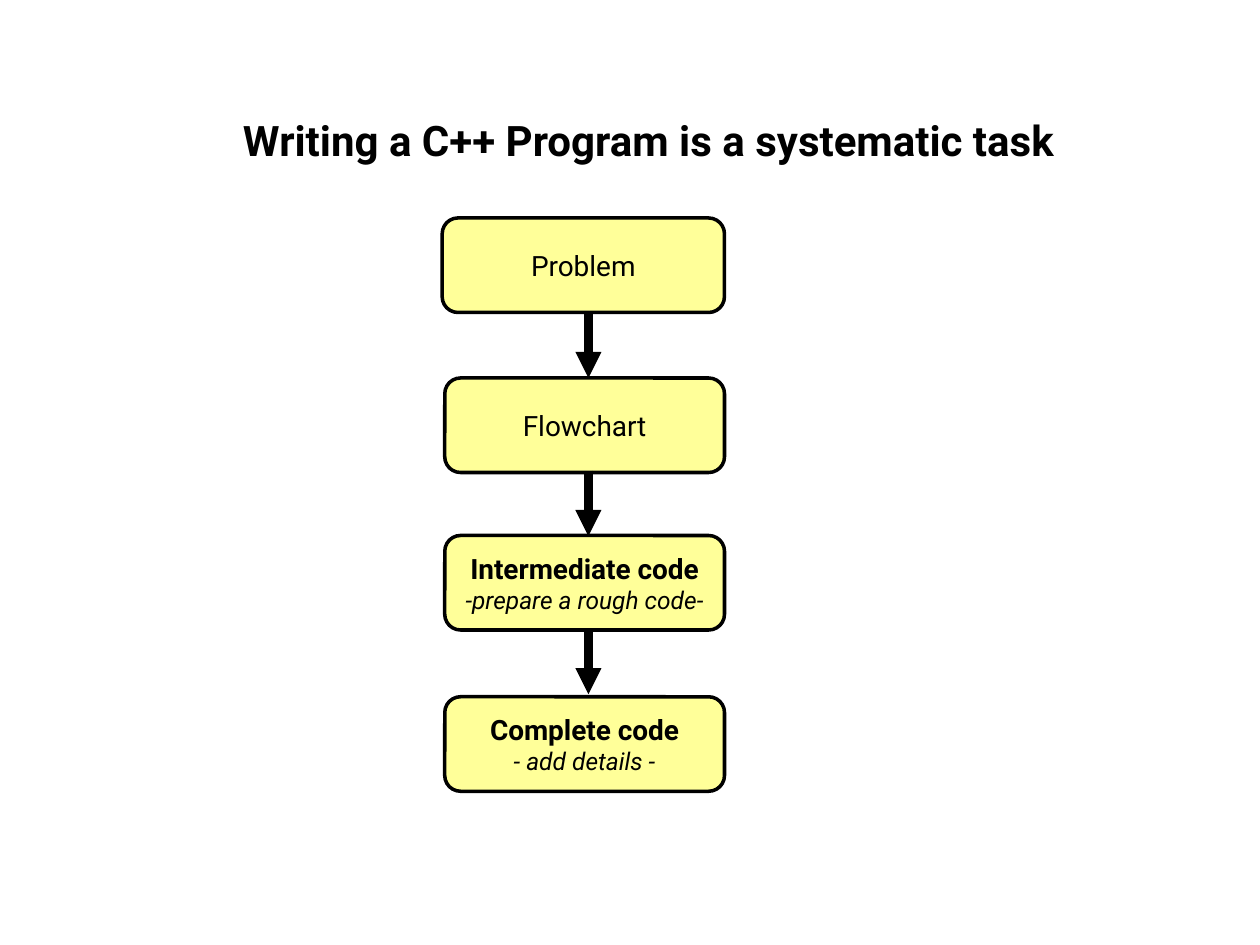
from lxml import etree
from pptx import Presentation
from pptx.dml.color import RGBColor
from pptx.enum import shapes, text
from pptx.oxml.ns import qn
from pptx.util import Inches, Pt

COLORS = {"ink": "000000", "step": "FFFF99"}
FONT = "Roboto"
STEP_H = 0.75
# left, top, width, lines of text
STEPS = [
    (3.51, 1.73, 2.24, ["Problem"]),
    (3.53, 3.00, 2.22, ["Flowchart"]),
    (3.53, 4.25, 2.22, ["Intermediate code", "-prepare a rough code-"]),
    (3.53, 5.53, 2.22, ["Complete code", "- add details -"]),
]
ARROW_X, ARROW_TOP, ARROW_PITCH, ARROW_LEN = 4.67, 2.48, 1.255, 0.52


def rgb(name):
    return RGBColor.from_string(COLORS[name])


def set_font(p, size, bold=False, italic=False):
    p.font.name = FONT
    p.font.size = Pt(size)
    p.font.bold = bold
    p.font.italic = italic
    p.font.color.rgb = rgb("ink")


def add_title(s, left, top, width, height, title):
    box = s.shapes.add_textbox(Inches(left), Inches(top), Inches(width), Inches(height))
    tf = box.text_frame
    tf.word_wrap = False
    tf.auto_size = text.MSO_AUTO_SIZE.SHAPE_TO_FIT_TEXT
    p = tf.paragraphs[0]
    p.text = title
    set_font(p, 24, bold=True)


def add_step(s, left, top, width, height, lines):
    """Add a rounded box; a heading with a remark below it is bold."""
    sp = s.shapes.add_shape(shapes.MSO_SHAPE.ROUNDED_RECTANGLE,
                            Inches(left), Inches(top), Inches(width), Inches(height))
    sp.shadow.inherit = False
    sp.fill.solid()
    sp.fill.fore_color.rgb = rgb("step")
    sp.line.color.rgb = rgb("ink")
    sp.line.width = Pt(2)
    tf = sp.text_frame
    tf.word_wrap = False
    tf.vertical_anchor = text.MSO_ANCHOR.MIDDLE
    for i, line in enumerate(lines):
        p = tf.add_paragraph() if i else tf.paragraphs[0]
        p.text = line
        p.alignment = text.PP_ALIGN.CENTER
        if i:
            set_font(p, 14, italic=True)
        else:
            set_font(p, 16, bold=len(lines) > 1)


def add_down_arrow(s, x, top, length):
    line = s.shapes.add_connector(shapes.MSO_CONNECTOR.STRAIGHT, Inches(x), Inches(top),
                                  Inches(x), Inches(top + length))
    line.line.color.rgb = rgb("ink")
    line.line.width = Pt(5)
    etree.SubElement(line.line._get_or_add_ln(), qn("a:tailEnd"), type="triangle")
    etree.SubElement(line._element.spPr, qn("a:effectLst"))


def add_flow(s):
    for left, top, width, lines in STEPS:
        add_step(s, left, top, width, STEP_H, lines)
    for i in range(len(STEPS) - 1):
        add_down_arrow(s, ARROW_X, ARROW_TOP + i * ARROW_PITCH, ARROW_LEN)


def main():
    prs = Presentation()
    prs.slide_width, prs.slide_height = Inches(10), Inches(7.5)
    s = prs.slides.add_slide(prs.slide_layouts[6])
    add_title(s, 1.83, 0.86, 6.97, 0.74, "Writing a C++ Program is a systematic task")
    add_flow(s)
    prs.save("out.pptx")


if __name__ == "__main__":
    main()
